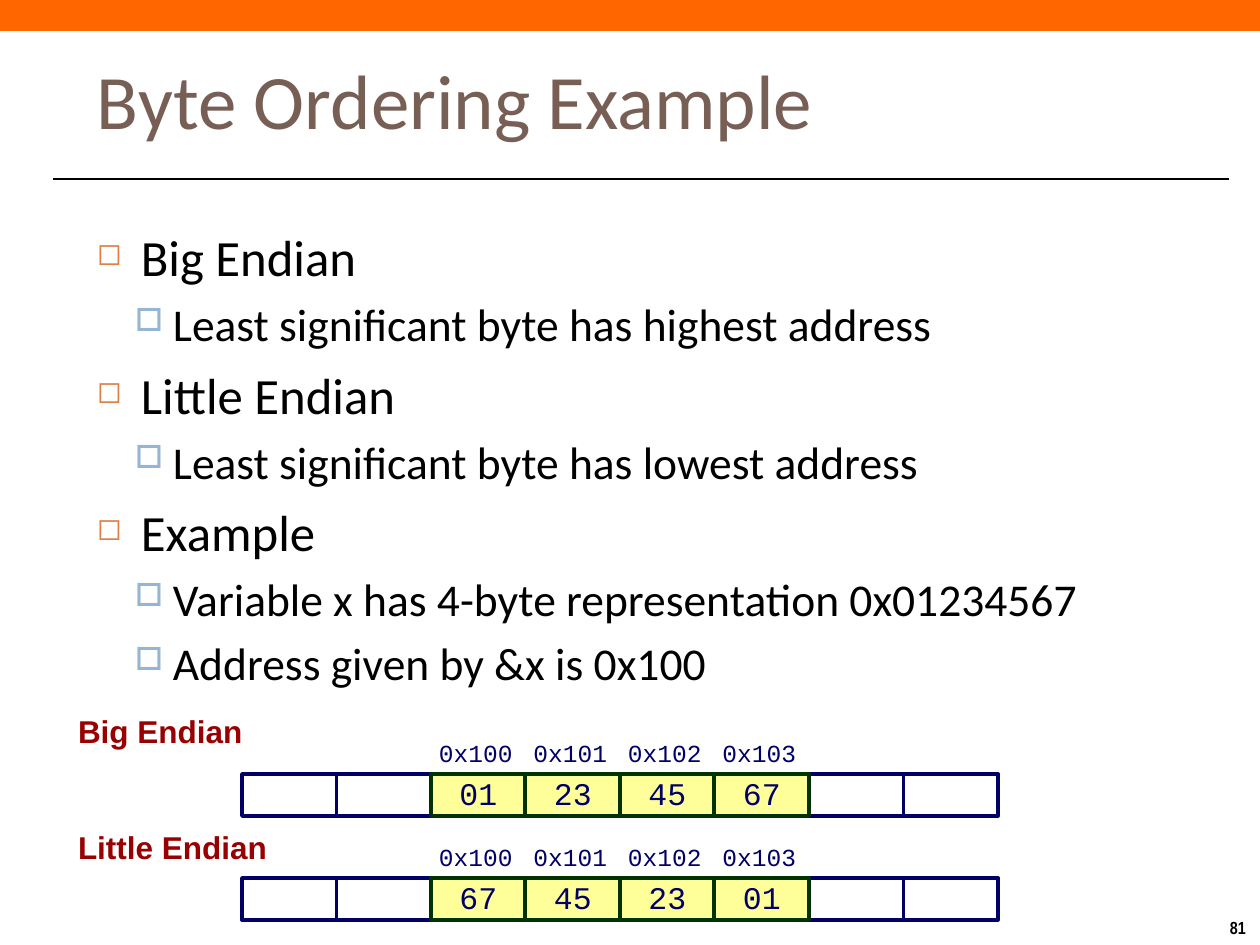
from lxml import etree
from pptx import Presentation
from pptx import util as u
from pptx.dml.color import RGBColor
from pptx.enum import shapes, text
from pptx.oxml.ns import qn

# Content
TITLE = "Byte Ordering Example"
PAGE_NUMBER = "81"
OUTLINE = [
    (0, "Big Endian"),
    (1, "Least significant byte has highest address"),
    (0, "Little Endian"),
    (1, "Least significant byte has lowest address"),
    (0, "Example"),
    (1, "Variable x has 4-byte representation 0x01234567"),
    (1, "Address given by &x is 0x100"),
]
ADDRESSES = ["0x100", "0x101", "0x102", "0x103"]
# name, top of name, top of memory cells, bytes
MEMORIES = [
    ("Big Endian", 711, 774, ["01", "23", "45", "67"]),
    ("Little Endian", 827, 878, ["67", "45", "23", "01"]),
]

# Formats
LEVELS = [
    dict(size=29, before=7, margin=44, hang=44, bullet="◻", color="DD8047", percent=60),
    dict(size=26, before=5.5, margin=76, hang=38, bullet="□", color="94B6D2", percent=70),
]
TITLE_FONT = dict(name="Calibri", size=44, color="775F55")
NUMBER_FONT = dict(name="Arial Narrow", size=10, color="000000", bold=True)
NAME_FONT = dict(name="Arial", size=18, color="980002", bold=True)
ADDRESS_FONT = dict(name="Courier New", size=14, color="000066")
BYTE_FONT = dict(name="Courier New", size=18, color="000066")
EMPTY_CELL = dict(fill="FFFFFF", line="000066", weight=2)
BYTE_CELL = dict(fill="FFFF99", line="003300", weight=2.25)

# Memory grid, in px
GRID_LEFT, CELL_WIDTH, CELL_HEIGHT = 242, 94.5, 42
CELL_COUNT, FIRST_BYTE = 8, 2
DEFAULT_INSETS = (13, 6, 13, 6)


def px(value):
    return u.Emu(round(value * 914400 / 126))


def rgb(value):
    return RGBColor.from_string(value)


def set_frame(shape, insets=DEFAULT_INSETS, anchor=text.MSO_ANCHOR.TOP, wrap=True):
    frame = shape.text_frame
    frame.word_wrap = wrap
    frame.vertical_anchor = anchor
    for side, inset in zip(("left", "top", "right", "bottom"), insets):
        setattr(frame, f"margin_{side}", px(inset))
    return frame


def write(para, words, style, align=text.PP_ALIGN.LEFT):
    para.alignment = align
    span = para.add_run()
    span.text = words
    for key, value in style.items():
        if key == "color":
            span.font.color.rgb = rgb(value)
        else:
            setattr(span.font, key, u.Pt(value) if key == "size" else value)


def add_text(page, place, words, style, **frame_options):
    box = page.shapes.add_textbox(*map(px, place))
    para = set_frame(box, **frame_options).paragraphs[0]
    write(para, words, style)
    return para


def add_rect(page, place, fill, line=None, weight=0):
    rect = page.shapes.add_shape(shapes.MSO_SHAPE.RECTANGLE, *map(px, place))
    rect.shadow.inherit = False
    rect.fill.solid()
    rect.fill.fore_color.rgb = rgb(fill)
    if line:
        rect.line.color.rgb = rgb(line)
        rect.line.width = u.Pt(weight)
    else:
        rect.line.fill.background()
    return rect


def add_bullet(para, level):
    props = para._p.get_or_add_pPr()
    props.set("marL", str(px(level["margin"])))
    props.set("indent", str(-px(level["hang"])))
    color = etree.SubElement(props, qn("a:buClr"))
    etree.SubElement(color, qn("a:srgbClr"), val=level["color"])
    etree.SubElement(props, qn("a:buSzPct"), val=str(level["percent"] * 1000))
    etree.SubElement(props, qn("a:buChar"), char=level["bullet"])


def add_outline(page):
    box = page.shapes.add_textbox(*map(px, (84, 220, 1124, 620)))
    frame = set_frame(box)
    for index, (depth, words) in enumerate(OUTLINE):
        para = frame.add_paragraph() if index else frame.paragraphs[0]
        level = LEVELS[depth]
        para.level = depth
        para.space_before = u.Pt(level["before"])
        add_bullet(para, level)
        write(para, words, dict(name="Calibri", size=level["size"], color="000000"))


def add_memory(page, name, name_top, top, values):
    lefts = [GRID_LEFT + i * CELL_WIDTH for i in range(CELL_COUNT)]
    byte_lefts = lefts[FIRST_BYTE:FIRST_BYTE + len(values)]

    # Addresses above the bytes
    for left, address in zip(byte_lefts, ADDRESSES):
        rect = add_rect(page, (left, top - CELL_HEIGHT, CELL_WIDTH, CELL_HEIGHT), "FFFFFF")
        frame = set_frame(rect, (8, 8, 8, 8), text.MSO_ANCHOR.MIDDLE, wrap=False)
        write(frame.paragraphs[0], address, ADDRESS_FONT)

    # Empty cells, then the bytes on top
    for left in lefts:
        if left not in byte_lefts:
            add_rect(page, (left, top, CELL_WIDTH, CELL_HEIGHT), **EMPTY_CELL)
    for left, value in zip(byte_lefts, values):
        cell = add_rect(page, (left, top, CELL_WIDTH, CELL_HEIGHT), **BYTE_CELL)
        frame = set_frame(cell, (0, 0, 0, 0), text.MSO_ANCHOR.MIDDLE, wrap=False)
        frame.paragraphs[0].line_spacing = 0.9
        write(frame.paragraphs[0], value, BYTE_FONT, text.PP_ALIGN.CENTER)

    para = add_text(page, (73, name_top, 247, 45), name, NAME_FONT, insets=(5, 4, 9, 4))
    para.line_spacing = 0.95


def main():
    deck = Presentation()
    deck.slide_width, deck.slide_height = px(1260), px(945)
    page = deck.slides.add_slide(deck.slide_layouts[6])

    # Top band, page number and rule
    add_rect(page, (0, 0, 1260, 31), "FF6600")
    add_text(page, (1217, 911, 43, 34), PAGE_NUMBER, NUMBER_FONT, wrap=False)
    rule = page.shapes.add_connector(
        shapes.MSO_CONNECTOR.STRAIGHT, *map(px, (53, 179, 1229, 179)))
    rule.line.color.rgb = rgb("000000")
    rule.line.width = u.Pt(1.5)
    etree.SubElement(rule._element.spPr, qn("a:effectLst"))

    # Title, outline and memory diagrams
    add_text(page, (84, 31, 1124, 136), TITLE, TITLE_FONT, anchor=text.MSO_ANCHOR.MIDDLE)
    add_outline(page)
    for memory in MEMORIES:
        add_memory(page, *memory)

    deck.save("out.pptx")


if __name__ == "__main__":
    main()
